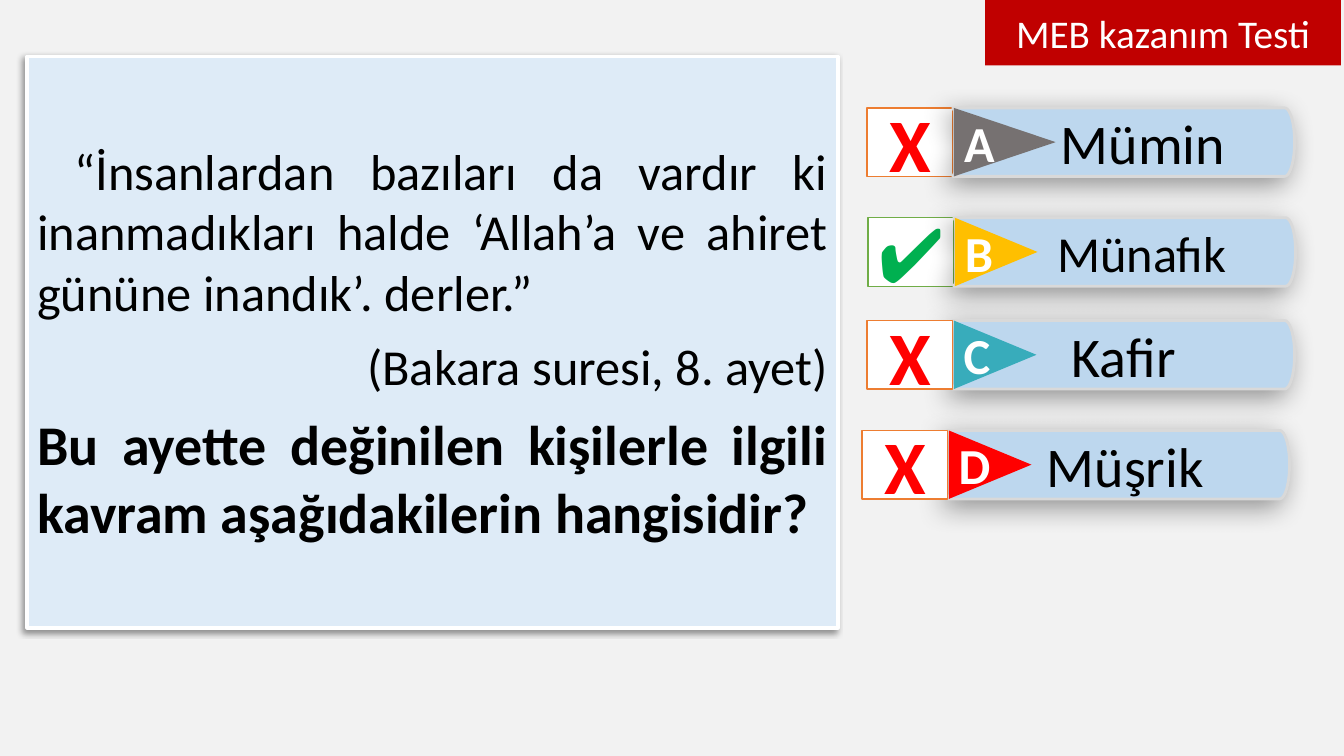
from math import cos, pi, sin

from lxml import etree
from pptx import Presentation
from pptx.dml.color import RGBColor
from pptx.enum.shapes import MSO_SHAPE as SHAPE
from pptx.enum.text import MSO_ANCHOR as ANCHOR, PP_ALIGN as ALIGN
from pptx.oxml.ns import qn
from pptx.util import Emu, Inches, Pt

COLS, ROWS = 1333, 750  # grid cells of 0.01 inch
MARK_W, BAR_W, ROW_H = 85, 339, 68
CAP, NOTCH = 10, 18  # bar's rounded end and pointed inset


def color(hex_code):
    return RGBColor.from_string(hex_code)


class Deck:
    font = "Calibri"

    def __init__(self):
        self.prs = Presentation()
        self.prs.slide_width, self.prs.slide_height = Inches(13.33), Inches(7.5)
        self.slide = self.prs.slides.add_slide(self.prs.slide_layouts[6])

    def background(self, hex_code):
        fill = self.slide.background.fill
        fill.solid()
        fill.fore_color.rgb = color(hex_code)

    def x(self, cols):
        return Emu(round(self.prs.slide_width * cols / COLS))

    def y(self, rows):
        return Emu(round(self.prs.slide_height * rows / ROWS))

    def style(self, s, fill, line=None, shadow=None):
        """Line is (colour, points); shadow is (blur, distance) in points."""
        s.fill.solid()
        s.fill.fore_color.rgb = color(fill)
        if line:
            s.line.color.rgb, s.line.width = color(line[0]), Pt(line[1])
        else:
            s.line.fill.background()
        s.shadow.inherit = False
        if shadow:
            blur, dist = shadow
            effects = s.element.spPr.find(qn("a:effectLst"))
            outer = etree.SubElement(effects, qn("a:outerShdw"), {
                "blurRad": str(Pt(blur)), "dist": str(Pt(dist)),
                "dir": str(135 * 60000), "algn": "tr", "rotWithShape": "0"})
            clr = etree.SubElement(outer, qn("a:srgbClr"), val="000000")
            etree.SubElement(clr, qn("a:alpha"), val="40000")

    def shape(self, kind, left, top, width, height, fill, line=None, shadow=None):
        s = self.slide.shapes.add_shape(
            kind, self.x(left), self.y(top), self.x(width), self.y(height))
        self.style(s, fill, line, shadow)
        return s

    def text(self, s, *paragraphs, inset=0):
        """Fill a shape with (words, alignment, font values); inset adds left margin."""
        tf = s.text_frame
        tf.word_wrap, tf.vertical_anchor = True, ANCHOR.MIDDLE
        tf.margin_left = Inches(0.1) + self.x(inset)
        for i, (words, align, values) in enumerate(paragraphs):
            p = tf.add_paragraph() if i else tf.paragraphs[0]
            p.alignment = align
            if i:
                p.space_before = Pt(10)
            r = p.add_run()
            r.text = words
            formats = {"name": self.font, "bold": False, **values}
            rgb = formats.pop("rgb", "000000")
            for name, value in formats.items():
                setattr(r.font, name, value)
            r.font.color.rgb = color(rgb)

    def mark(self, left, top, correct):
        """Box with a tick for the right answer or a cross for a wrong one."""
        s = self.shape(SHAPE.RECTANGLE, left, top, MARK_W, ROW_H, "FFFFFF",
                       ("70AD47" if correct else "ED7D31", 1))
        if correct:
            self.text(s, ("✔", ALIGN.LEFT, {"size": Pt(54), "rgb": "00B050"}))
        else:
            self.text(s, ("X", ALIGN.CENTER,
                          {"size": Pt(54), "bold": True, "rgb": "FF0000"}))

    def bar(self, left, top, answer, size, inset):
        mid, steps = top + ROW_H / 2, 24
        end = left + BAR_W - CAP
        angles = [pi * (i / steps - 0.5) for i in range(steps + 1)]
        points = [(end + CAP * cos(a), mid + ROW_H / 2 * sin(a)) for a in angles]
        points += [(left, top + ROW_H), (left + NOTCH, mid)]
        builder = self.slide.shapes.build_freeform(self.x(left), self.y(top), 1.0)
        builder.add_line_segments([(self.x(a), self.y(b)) for a, b in points], close=True)
        s = builder.convert_to_shape()
        self.style(s, "BDD7EE", ("D9D9D9", 2), (20, 7))
        self.text(s, (answer, ALIGN.CENTER, {"size": Pt(size)}), inset=inset)

    def pointer(self, left, top, letter, length, fill):
        """Triangle turned to point right, with an upright letter."""
        s = self.shape(SHAPE.ISOSCELES_TRIANGLE, left + (length - ROW_H) / 2,
                       top + (ROW_H - length) / 2, ROW_H, length, fill)
        s.rotation = 90
        self.text(s, (letter, ALIGN.CENTER,
                      {"size": Pt(36), "bold": True, "rgb": "FFFFFF"}))
        s.element.txBody.find(qn("a:bodyPr")).set("vert", "vert270")


def main():
    d = Deck()
    d.background("F2F2F2")

    question = d.shape(SHAPE.RECTANGLE, 27, 56, 804, 567, "DEEBF7", ("FFFFFF", 2.5), (4, 3))
    d.text(
        question,
        ("“İnsanlardan bazıları da vardır ki inanmadıkları halde ‘Allah’a ve ahiret "
         "gününe inandık’. derler.”", ALIGN.JUSTIFY, {"size": Pt(36)}),
        ("(Bakara suresi, 8. ayet)", ALIGN.RIGHT, {"size": Pt(36)}),
        ("Bu ayette değinilen kişilerle ilgili kavram aşağıdakilerin hangisidir?",
         ALIGN.JUSTIFY, {"size": Pt(40), "bold": True}))
    verse = question.element.txBody.find(qn("a:p"))
    verse.get_or_add_pPr().set("indent", str(Inches(0.37)))

    # letter, left, top, answer, text size, text inset, pointer length, pointer colour
    options = [
        ("A", 860, 107, "Mümin", 40, 38, 101, "767171"),
        ("B", 861, 216, "Münafık", 36, 34, 82, "FFBF00"),
        ("C", 860, 318, "Kafir", 40, 0, 82, "38ACBB"),
        ("D", 855, 427, "Müşrik", 40, 13, 82, "FF0000"),
    ]

    def add_marks(rows):
        for letter, left, top, *_ in rows:
            d.mark(left, top, letter == "B")

    add_marks(options[:2])
    for letter, left, top, answer, size, inset, length, fill in options:
        d.bar(left + MARK_W, top, answer, size, inset)
        d.pointer(left + MARK_W + 1, top, letter, length, fill)
    add_marks(options[2:])

    title = d.shape(SHAPE.RECTANGLE, 977, 0, 353, 65, "C00000")
    d.text(title, ("MEB kazanım Testi", ALIGN.CENTER, {"size": Pt(28), "rgb": "FFFFFF"}))

    d.prs.save("out.pptx")


if __name__ == "__main__":
    main()
